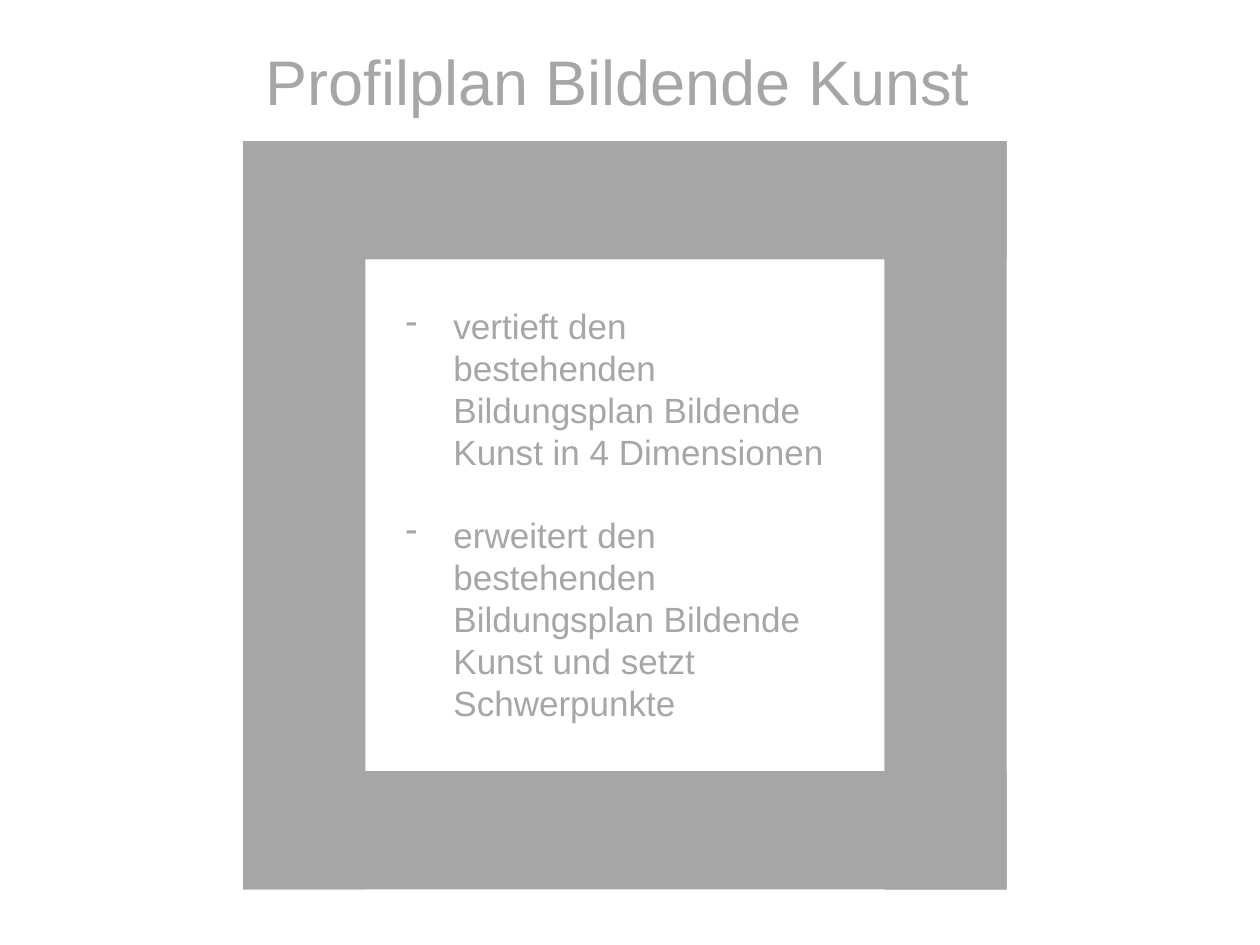
from dataclasses import dataclass

from lxml import etree
from pptx import Presentation
from pptx import util as u
from pptx.dml.color import RGBColor
from pptx.enum import shapes, text
from pptx.oxml import ns


@dataclass(frozen=True)
class Theme:
    gray: RGBColor = RGBColor(0xA6, 0xA6, 0xA6)
    font: str = "Arial"
    title_size: int = 36
    body_size: int = 20
    paragraph_gap: int = 23
    indent: float = 0.38


THEME = Theme()
SLIDE_WIDTH, SLIDE_HEIGHT = 10, 7.5
FRAME_LEFT, FRAME_TOP = 1.93, 1.12
FRAME_WIDTH, FRAME_HEIGHT = 6.06, 5.94
SIDE_BAR, FLAT_BAR = 0.97, 0.94
GOALS = (
    "vertieft den bestehenden Bildungsplan Bildende Kunst in 4 Dimensionen",
    "erweitert den bestehenden Bildungsplan Bildende Kunst und setzt Schwerpunkte",
)


def box(left, top, width, height):
    return [u.Inches(length) for length in (left, top, width, height)]


def style_paragraph(paragraph, size):
    paragraph.alignment = text.PP_ALIGN.LEFT
    for run in paragraph.runs:
        run.font.name = THEME.font
        run.font.size = u.Pt(size)
        run.font.color.rgb = THEME.gray


def set_title(slide, title):
    shape = slide.shapes.title
    shape.left, shape.top, shape.width, shape.height = box(2.01, 0.29, 6.53, 0.71)
    frame = shape.text_frame
    frame.text = title
    frame.word_wrap = True
    frame.auto_size = text.MSO_AUTO_SIZE.NONE
    frame.vertical_anchor = text.MSO_ANCHOR.TOP
    style_paragraph(frame.paragraphs[0], THEME.title_size)


def add_bar(slide, left, top, width, height):
    shape = slide.shapes.add_shape(
        shapes.MSO_SHAPE.RECTANGLE, *box(left, top, width, height)
    )
    shape.shadow.inherit = False
    shape.fill.solid()
    shape.fill.fore_color.rgb = THEME.gray
    shape.line.fill.background()
    return shape


def add_side_bar(slide, left, rotation):
    center_x = left + SIDE_BAR / 2
    center_y = FRAME_TOP + FRAME_HEIGHT / 2
    shape = add_bar(
        slide,
        center_x - FRAME_HEIGHT / 2,
        center_y - SIDE_BAR / 2,
        FRAME_HEIGHT,
        SIDE_BAR,
    )
    shape.rotation = rotation


def add_frame(slide):
    add_side_bar(slide, FRAME_LEFT + FRAME_WIDTH - SIDE_BAR, 270)
    add_side_bar(slide, FRAME_LEFT, 90)
    for top in (FRAME_TOP, FRAME_TOP + FRAME_HEIGHT - FLAT_BAR):
        add_bar(slide, FRAME_LEFT, top, FRAME_WIDTH, FLAT_BAR)


def set_dash(paragraph):
    properties = paragraph._p.get_or_add_pPr()
    indent = u.Inches(THEME.indent)
    properties.set("marL", str(indent))
    properties.set("indent", str(-indent))
    bullet = etree.SubElement(properties, ns.qn("a:buChar"))
    bullet.set("char", "-")


def add_goals(slide, goals):
    shape = slide.shapes.add_textbox(*box(3.12, 2.37, 3.62, 3.47))
    frame = shape.text_frame
    frame.text = "\n".join(goals)
    frame.word_wrap = True
    for index, paragraph in enumerate(frame.paragraphs):
        style_paragraph(paragraph, THEME.body_size)
        paragraph.space_before = u.Pt(THEME.paragraph_gap if index else 0)
        set_dash(paragraph)


def main():
    presentation = Presentation()
    presentation.slide_width = u.Inches(SLIDE_WIDTH)
    presentation.slide_height = u.Inches(SLIDE_HEIGHT)
    slide = presentation.slides.add_slide(
        presentation.slide_layouts.get_by_name("Title Only")
    )
    set_title(slide, "Profilplan Bildende Kunst")
    add_frame(slide)
    add_goals(slide, GOALS)
    presentation.save("out.pptx")


if __name__ == "__main__":
    main()
